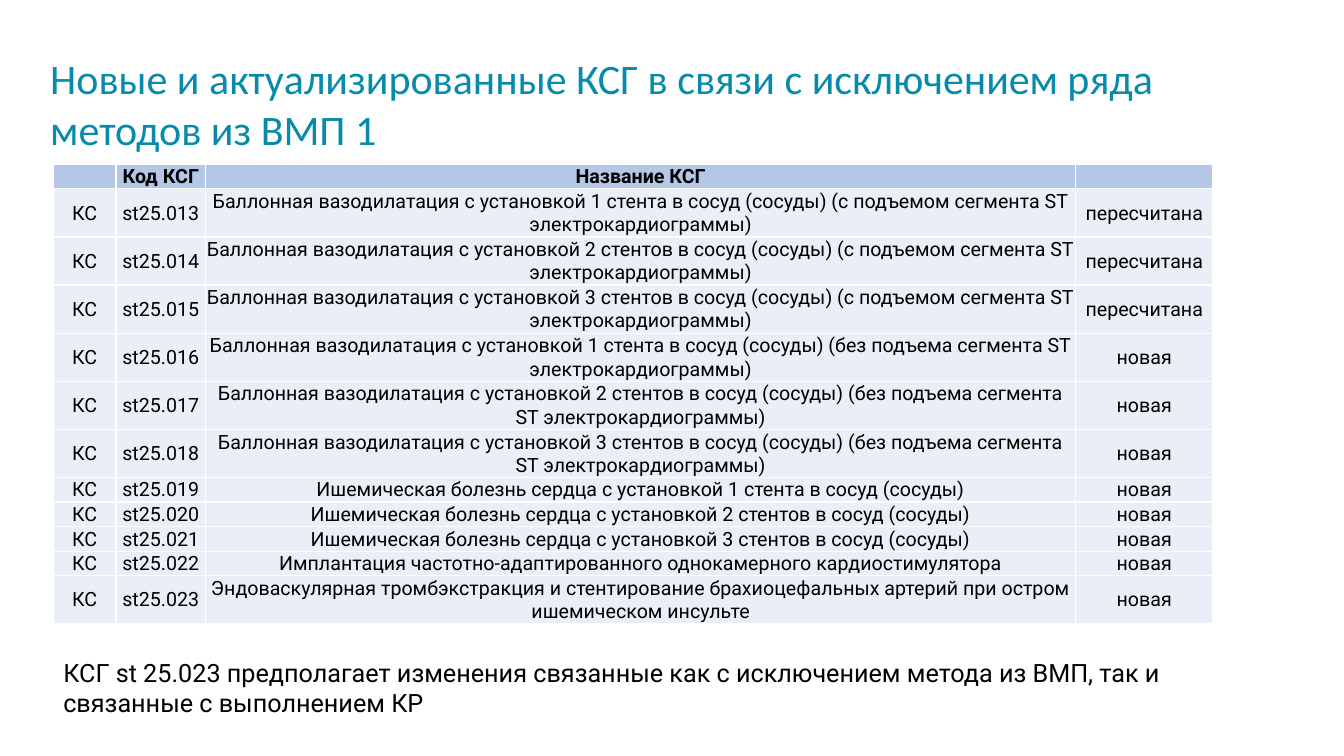
from lxml.etree import SubElement
from pptx import Presentation
from pptx.dml.color import RGBColor
from pptx.enum.text import MSO_ANCHOR, PP_ALIGN
from pptx.oxml.ns import qn
from pptx.util import Inches, Pt

TEAL = RGBColor(0x08, 0x8A, 0xAB)
BLACK = RGBColor(0, 0, 0)
BLUE = RGBColor(0xB4, 0xC7, 0xE7)
PALE = RGBColor(0xEA, 0xEF, 0xF7)
WHITE = RGBColor(0xFF, 0xFF, 0xFF)

TITLE = "Новые и актуализированные КСГ в связи с исключением ряда методов из ВМП 1"
NOTE = ("КСГ st 25.023 предполагает изменения связанные как с исключением метода "
        "из ВМП, так и связанные с выполнением КР")
STENTS = ["1 стента", "2 стентов", "3 стентов"]
HEAD = ["", "Код КСГ", "Название КСГ", ""]
WIDTHS = [0.62, 0.89, 8.63, 1.36]
LOW, TALL = 0.24, 0.47
LIMIT = 80  # characters that fit on one line of the name column


def get_rows():
    """Rows of group type, code, name and status."""
    names = [
        f"Баллонная вазодилатация с установкой {stent} в сосуд (сосуды) "
        f"({kind} сегмента ST электрокардиограммы)"
        for kind in ("с подъемом", "без подъема") for stent in STENTS
    ]
    names += [f"Ишемическая болезнь сердца с установкой {stent} в сосуд (сосуды)"
              for stent in STENTS]
    names += [
        "Имплантация частотно-адаптированного однокамерного кардиостимулятора",
        "Эндоваскулярная тромбэкстракция и стентирование брахиоцефальных артерий "
        "при остром ишемическом инсульте",
    ]
    return [["КС", f"st25.{13 + i:03}", name, "пересчитана" if i < 3 else "новая"]
            for i, name in enumerate(names)]


def set_text(frame, text, color=BLACK, **look):
    """Write one formatted run into the first paragraph."""
    run = frame.paragraphs[0].add_run()
    run.text = text
    for key, value in look.items():
        setattr(run.font, key, value)
    run.font.color.rgb = color


def add_text(slide, box, text, anchor, color, **look):
    frame = slide.shapes.add_textbox(*map(Inches, box)).text_frame
    frame.word_wrap = True
    frame.vertical_anchor = anchor
    set_text(frame, text, color, **look)


def add_lines(cell):
    """White borders on all four sides."""
    props = cell._tc.get_or_add_tcPr()
    for side in ("lnL", "lnR", "lnT", "lnB"):
        line = SubElement(props, qn(f"a:{side}"), w=str(Pt(1)))
        fill = SubElement(line, qn("a:solidFill"))
        SubElement(fill, qn("a:srgbClr"), val=str(WHITE))


def fill_cell(cell, text, color, bold):
    add_lines(cell)
    cell.fill.solid()
    cell.fill.fore_color.rgb = color
    form = {"margin_left": Inches(0.01), "margin_right": Inches(0.01),
            "margin_top": Inches(0.01), "margin_bottom": 0,
            "vertical_anchor": MSO_ANCHOR.MIDDLE}
    for key, value in form.items():
        setattr(cell, key, value)
    para = cell.text_frame.paragraphs[0]
    para.alignment = PP_ALIGN.CENTER
    if text:
        set_text(cell.text_frame, text, name="Roboto", size=Pt(14), bold=bold)
    else:
        # Keeps the empty cell as low as its row
        SubElement(para._p, qn("a:endParaRPr"), sz="1400")


def add_grid(slide, left, top, rows):
    highs = [TALL if len(row[2]) > LIMIT else LOW for row in rows]
    table = slide.shapes.add_table(
        len(rows), len(WIDTHS), Inches(left), Inches(top),
        Inches(sum(WIDTHS)), Inches(sum(highs))).table
    for col, width in zip(table.columns, WIDTHS):
        col.width = Inches(width)
    for r, (row, high) in enumerate(zip(rows, highs)):
        table.rows[r].height = Inches(high)
        for c, text in enumerate(row):
            fill_cell(table.cell(r, c), text, PALE if r else BLUE, r == 0)


def main():
    deck = Presentation()
    deck.slide_width, deck.slide_height = Inches(13.33), Inches(7.5)
    slide = deck.slides.add_slide(deck.slide_layouts[6])
    # Title
    add_text(slide, (0.4, 0.42, 12.4, 1.21), TITLE, MSO_ANCHOR.MIDDLE, TEAL,
             name="Calibri", size=Pt(30))
    # Table of groups
    add_grid(slide, 0.53, 1.63, [HEAD] + get_rows())
    # Note below the table
    add_text(slide, (0.53, 6.47, 11.33, 0.71), NOTE, MSO_ANCHOR.TOP, BLACK,
             name="Roboto", size=Pt(18))
    deck.save("out.pptx")


if __name__ == "__main__":
    main()
